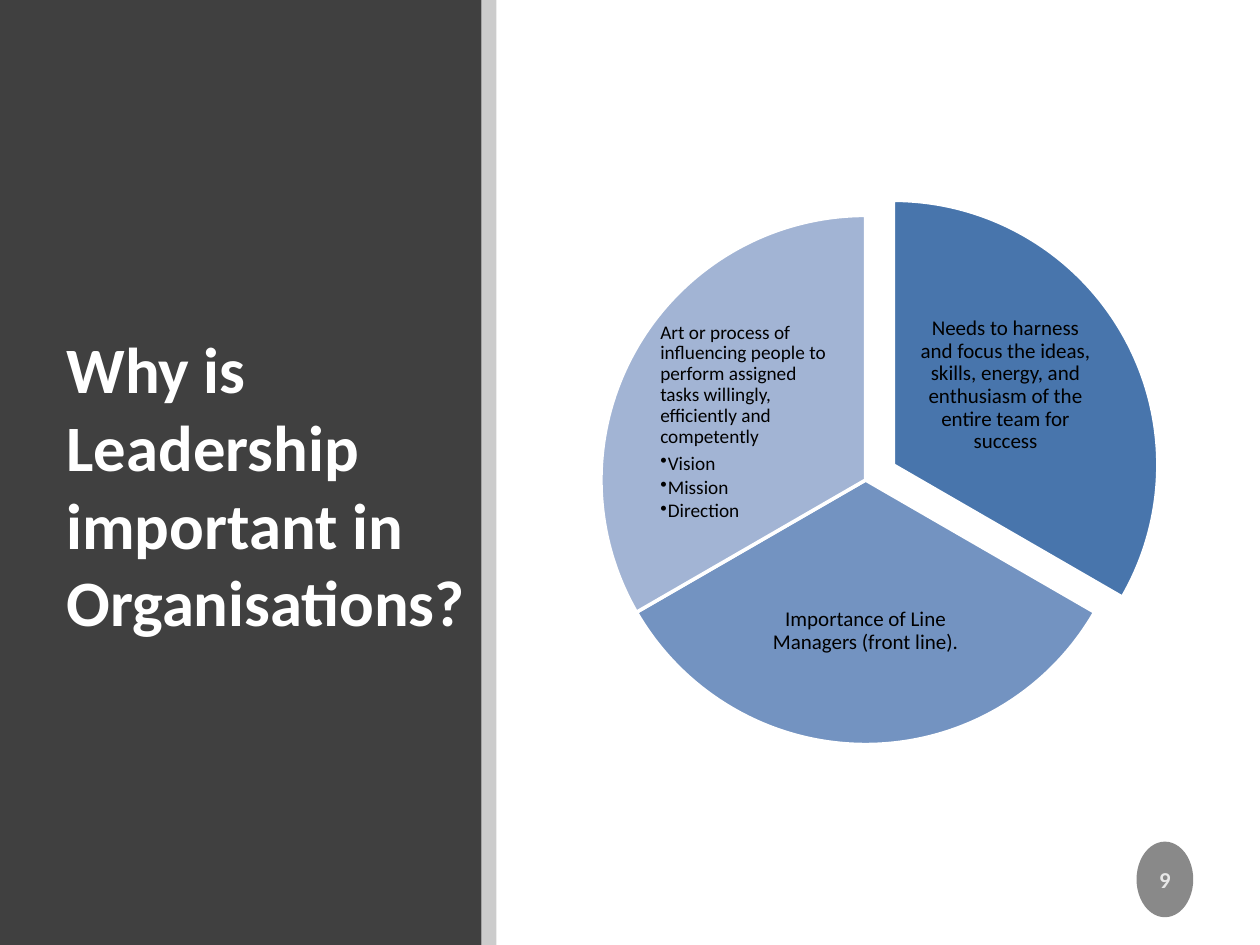
"""Build the slide on why leadership matters: a title panel beside a three-part pie."""
from lxml import etree
from pptx import Presentation
from pptx import util as u
from pptx.dml.color import RGBColor
from pptx.enum import shapes, text
from pptx.oxml.ns import qn

WIDTH, HEIGHT = 10, 7.5
FONT = "Calibri"
BLACK = RGBColor(0x00, 0x00, 0x00)
WHITE = RGBColor(0xFF, 0xFF, 0xFF)
CHARCOAL = RGBColor(0x40, 0x40, 0x40)
GREY = RGBColor(0x89, 0x89, 0x89)
DEEP_BLUE = RGBColor(0x48, 0x75, 0xAC)
MID_BLUE = RGBColor(0x73, 0x93, 0xC1)
PALE_BLUE = RGBColor(0xA2, 0xB4, 0xD4)

TITLE = "Why is Leadership important in Organisations?"
PAGE_NUMBER = "9"
PANEL_WIDTH, STRIPE_WIDTH = 0.382 * WIDTH, 0.012 * WIDTH
PIE_LEFT, PIE_TOP, PIE_SIZE = 4.77, 1.71, 4.2
FIRST_ANGLE, SLICE_ANGLE, FULL_TURN = 162, 72, 216
SLICES = [
    dict(color=DEEP_BLUE, shift=(0.22, -0.12), box=(7.27, 2.36, 1.42, 1.4), size=12,
         label="Needs to harness and focus the ideas, skills, energy, and enthusiasm "
               "of the entire team for success", bullets=[]),
    dict(color=MID_BLUE, shift=(0, 0), box=(5.92, 4.36, 1.9, 1.3), size=12,
         label="Importance of Line Managers (front line).", bullets=[]),
    dict(color=PALE_BLUE, shift=(0, 0), box=(5.22, 2.54, 1.42, 1.4), size=11,
         label="Art or process of influencing people to perform assigned tasks "
               "willingly, efficiently and competently",
         bullets=["Vision", "Mission", "Direction"]),
]


def inches(*lengths):
    return [u.Inches(length) for length in lengths]


def set_alpha(properties, percent):
    color = properties.find(".//" + qn("a:srgbClr"))
    etree.SubElement(color, qn("a:alpha")).set("val", str(percent * 1000))


def add_shape(slide, kind, box, fill, line=None):
    shape = slide.shapes.add_shape(kind, *inches(*box))
    shape.shadow.inherit = False
    shape.fill.solid()
    shape.fill.fore_color.rgb = fill
    if line is None:
        shape.line.fill.background()
    else:
        shape.line.color.rgb = line
        shape.line.width = u.Pt(2)
    return shape


def add_textbox(slide, box, anchor, inset=None):
    frame = slide.shapes.add_textbox(*inches(*box)).text_frame
    frame.word_wrap = True
    frame.vertical_anchor = anchor
    if inset is not None:
        frame.margin_left = frame.margin_right = u.Inches(inset)
        frame.margin_top = frame.margin_bottom = u.Inches(inset)
    return frame


def write(paragraph, words, size, color, bold=False, align=text.PP_ALIGN.LEFT):
    paragraph.text = words
    paragraph.alignment = align
    font = paragraph.runs[0].font
    font.name, font.size, font.bold = FONT, u.Pt(size), bold
    font.color.rgb = color


def add_bullet(paragraph, indent):
    properties = paragraph._p.get_or_add_pPr()
    properties.set("marL", str(u.Inches(indent)))
    properties.set("indent", str(-u.Inches(indent)))
    etree.SubElement(properties, qn("a:buChar")).set("char", "•")


def add_slice(slide, index, color, shift, box, size, label, bullets):
    left, top = PIE_LEFT + shift[0], PIE_TOP + shift[1]
    pie = add_shape(slide, shapes.MSO_SHAPE.PIE, (left, top, PIE_SIZE, PIE_SIZE), color, WHITE)
    start = FIRST_ANGLE + index * SLICE_ANGLE
    pie.adjustments[0] = start % FULL_TURN
    pie.adjustments[1] = (start + SLICE_ANGLE) % FULL_TURN

    anchor = text.MSO_ANCHOR.TOP if bullets else text.MSO_ANCHOR.MIDDLE
    align = text.PP_ALIGN.LEFT if bullets else text.PP_ALIGN.CENTER
    frame = add_textbox(slide, box, anchor, 0.02)
    for position, words in enumerate([label] + bullets):
        paragraph = frame.add_paragraph() if position else frame.paragraphs[0]
        paragraph.line_spacing = 0.9
        paragraph.space_after = u.Pt(size * (0.15 if position else 0.35))
        if position:
            paragraph.level = 1
            add_bullet(paragraph, 0.06)
        write(paragraph, words, size, BLACK, align=align)


def main():
    presentation = Presentation()
    presentation.slide_width, presentation.slide_height = inches(WIDTH, HEIGHT)
    slide = presentation.slides.add_slide(presentation.slide_layouts[6])

    rectangle = shapes.MSO_SHAPE.RECTANGLE
    add_shape(slide, rectangle, (0, 0, PANEL_WIDTH, HEIGHT), CHARCOAL)
    stripe = add_shape(slide, rectangle, (PANEL_WIDTH, 0, STRIPE_WIDTH, HEIGHT), BLACK)
    set_alpha(stripe._element.spPr, 20)

    title = add_textbox(slide, (0.43, 0.89, 3.7, 5.91), text.MSO_ANCHOR.MIDDLE)
    write(title.paragraphs[0], TITLE, 37, WHITE, bold=True)

    for index, part in enumerate(SLICES):
        add_slice(slide, index, **part)

    badge = add_shape(slide, shapes.MSO_SHAPE.OVAL, (9.02, 6.68, 0.45, 0.6), GREY)
    badge.text_frame.vertical_anchor = text.MSO_ANCHOR.MIDDLE
    number = badge.text_frame.paragraphs[0]
    number.space_after = u.Pt(6)
    write(number, PAGE_NUMBER, 13, WHITE, bold=True, align=text.PP_ALIGN.CENTER)
    set_alpha(number.runs[0].font._element, 80)

    presentation.save("out.pptx")


if __name__ == "__main__":
    main()
